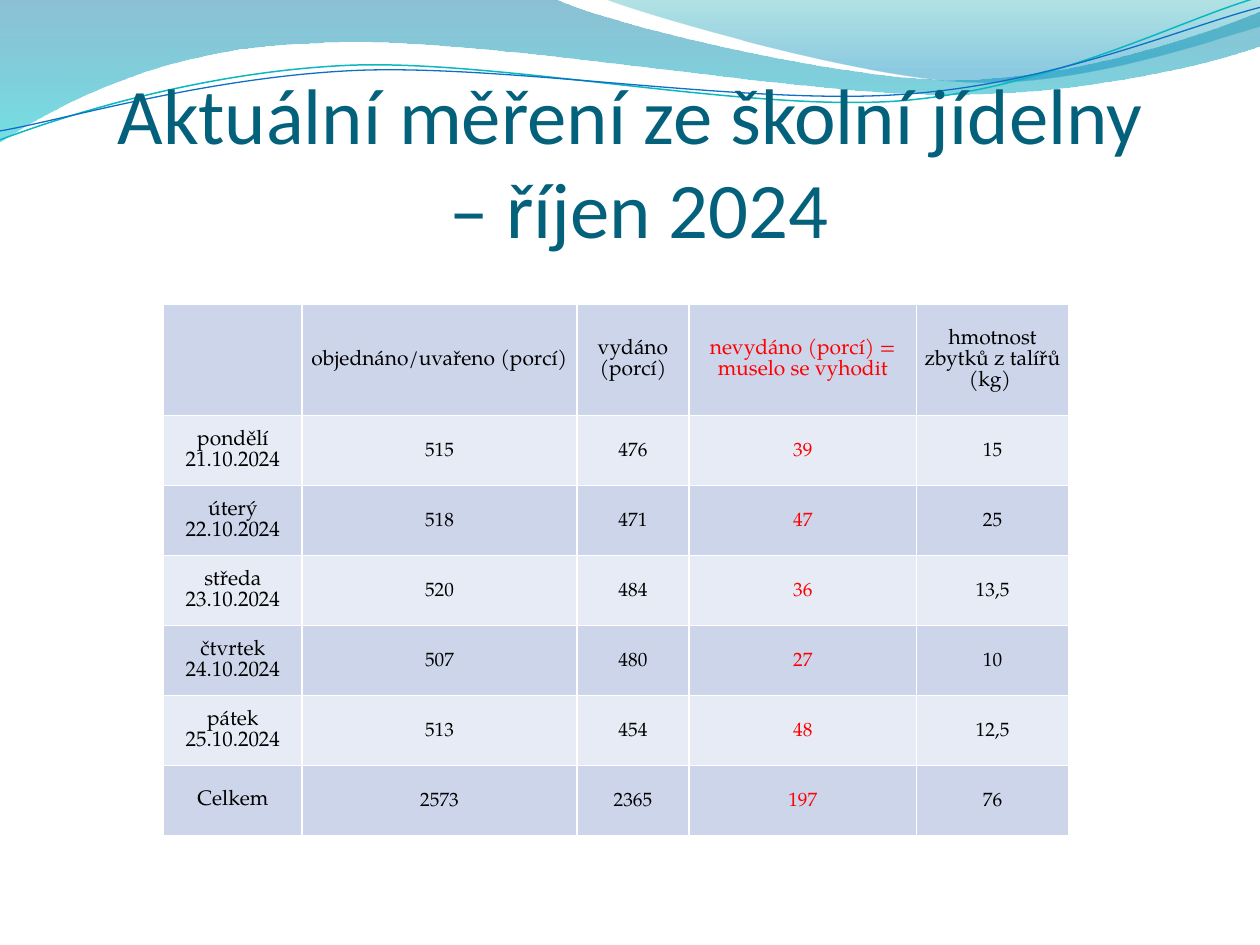
from dataclasses import dataclass

from lxml import etree
from pptx import Presentation
from pptx.dml.color import RGBColor
from pptx.enum.text import MSO_ANCHOR, MSO_AUTO_SIZE, PP_ALIGN
from pptx.oxml.ns import qn
from pptx.util import Cm, Pt

CENTER = PP_ALIGN.CENTER
MIDDLE, BOTTOM = MSO_ANCHOR.MIDDLE, MSO_ANCHOR.BOTTOM
NO_AUTOFIT = MSO_AUTO_SIZE.NONE
TITLE_ONLY = 5


@dataclass(frozen=True)
class Theme:
    title_font: str = "Calibri"
    table_font: str = "TeX Gyre Pagella"
    title_size: float = 45
    label_size: float = 12
    value_size: float = 11
    title_color: str = "04617B"
    text_color: str = "000000"
    alert_color: str = "FF0000"
    border_color: str = "FFFFFF"
    bands: tuple = ("CCD5EA", "E7EBF5")
    # Gradient stops: position, colour, opacity in percent
    wide_wave: tuple = ((0, "0074A1", 45), (1, "00C6CF", 55))
    right_wave: tuple = ((0, "00A1A9", 30), (0.8, "008BBF", 45))
    teal_line: str = "0AB8BF"
    blue_line: str = "0F6FC6"
    curve_rotation: float = 357.3


# Outlines in cm: a start point, then lines (x, y) or cubic curves (six numbers)
WIDE_WAVE = [
    (0, 0), (11.18, -0.03),
    (12.09, 0.43, 16.87, 1.6, 19.25, 1.6),
    (21.67, 1.6, 24.33, 0.66, 25.4, 0.23),
    (25.43, 0.91),
    (24.97, 1.12, 22.1, 1.93, 18.95, 1.9),
    (15.8, 1.9, 9.7, 0.71, 6.53, 0.86),
    (3.28, 0.91, 1.17, 2.11, -0.03, 2.87),
]
RIGHT_WAVE = [
    (12.17, -0.03),
    (12.93, 0.28, 17.32, 1.57, 19.53, 1.65),
    (21.74, 1.75, 24.41, 0.81, 25.4, 0.53),
    (25.4, 0),
]
# The two thin curves are given before their rotation
TEAL_CURVE = [
    (-0.05, 2.22),
    (1.19, 1.82, 4.02, 1.04, 7.05, 1.05),
    (10.05, 1.07, 15.02, 2.37, 18.08, 2.29),
    (21.13, 2.2, 23.86, 0.91, 25.41, 0.55),
]
BLUE_CURVE = [
    (-0.04, 2.04),
    (1.16, 1.9, 4.17, 1.15, 7.2, 1.16),
    (10.25, 1.18, 15.13, 2.25, 18.19, 2.16),
    (21.22, 2.1, 23.93, 1.06, 25.45, 0.75),
]

TITLE_LINES = ["Aktuální měření ze školní jídelny", " – říjen 2024"]
COLUMN_WIDTHS = [2.79, 5.54, 2.26, 4.59, 3.06]
HEADER_HEIGHT, DAY_HEIGHT = 2.25, 1.41
ALERT_COLUMN = 3
ROWS = [
    ["", "objednáno/uvařeno (porcí)", "vydáno (porcí)",
     "nevydáno (porcí) = muselo se vyhodit", "hmotnost zbytků z talířů (kg) "],
    ["pondělí 21.10.2024", "515", "476", "39", "15"],
    ["úterý 22.10.2024", "518", "471", "47", "25"],
    ["středa 23.10.2024", "520", "484", "36", "13,5"],
    ["čtvrtek 24.10.2024", "507", "480", "27", "10"],
    ["pátek 25.10.2024", "513", "454", "48", "12,5"],
    ["Celkem", "2573", "2365", "197", "76"],
]


class SlideBuilder:
    def __init__(self, slide, theme):
        self.slide = slide
        self.theme = theme

    def add_run(self, paragraph, text, font, size, color):
        run = paragraph.add_run()
        run.text = text
        run.font.name = font
        run.font.size = Pt(size)
        run.font.color.rgb = RGBColor.from_string(color)

    def outline(self, outline, close):
        start, *segments = outline
        points = [(Cm(segment[i]), Cm(segment[i + 1]))
                  for segment in segments for i in range(0, len(segment), 2)]
        builder = self.slide.shapes.build_freeform(Cm(start[0]), Cm(start[1]))
        builder.add_line_segments(points, close=close)
        shape = builder.convert_to_shape()
        shape.shadow.inherit = False
        # Join each group of three points into one cubic curve
        lines = iter(list(shape.element.iter(qn("a:lnTo"))))
        for segment in segments:
            first = next(lines)
            if len(segment) == 6:
                curve = etree.Element(qn("a:cubicBezTo"))
                first.addprevious(curve)
                for line in (first, next(lines), next(lines)):
                    curve.append(line[0])
                    line.getparent().remove(line)
        return shape

    def wave(self, outline, stops):
        shape = self.outline(outline, close=True)
        shape.line.fill.background()
        shape.fill.gradient()
        shape.fill.gradient_angle = 270
        for stop, (position, color, _) in zip(shape.fill.gradient_stops, stops):
            stop.position = position
            stop.color.rgb = RGBColor.from_string(color)
        colors = shape.element.spPr.iter(qn("a:srgbClr"))
        for color, (_, _, opacity) in zip(colors, stops):
            etree.SubElement(color, qn("a:alpha")).set("val", str(opacity * 1000))

    def curve(self, outline, color, width):
        shape = self.outline(outline, close=False)
        shape.rotation = self.theme.curve_rotation
        shape.fill.background()
        shape.line.color.rgb = RGBColor.from_string(color)
        shape.line.width = Pt(width)

    def title(self, lines, left, top, width, height):
        title = self.slide.shapes.title
        title.left, title.top = Cm(left), Cm(top)
        title.width, title.height = Cm(width), Cm(height)
        frame = title.text_frame
        frame.auto_size = NO_AUTOFIT
        frame.word_wrap = True
        frame.vertical_anchor = BOTTOM
        frame.margin_left = frame.margin_right = frame.margin_bottom = 0
        paragraph = frame.paragraphs[0]
        paragraph.alignment = CENTER
        for index, line in enumerate(lines):
            if index:
                paragraph.add_line_break()
            self.add_run(paragraph, line, self.theme.title_font,
                         self.theme.title_size, self.theme.title_color)
        # Bring the title in front of the waves
        self.slide.shapes.element.append(title.element)

    def cell(self, cell, text, fill, size, color):
        cell.margin_left = cell.margin_right = cell.margin_top = Cm(0.03)
        cell.margin_bottom = 0
        cell.vertical_anchor = MIDDLE
        cell.fill.solid()
        cell.fill.fore_color.rgb = RGBColor.from_string(fill)
        if text:
            paragraph = cell.text_frame.paragraphs[0]
            paragraph.alignment = CENTER
            paragraph.line_spacing = Pt(self.theme.label_size)
            self.add_run(paragraph, text, self.theme.table_font, size, color)
        properties = cell._tc.get_or_add_tcPr()
        for index, side in enumerate(("a:lnL", "a:lnR", "a:lnT", "a:lnB")):
            border = etree.Element(qn(side), w=str(Pt(1)))
            solid = etree.SubElement(border, qn("a:solidFill"))
            etree.SubElement(solid, qn("a:srgbClr"), val=self.theme.border_color)
            properties.insert(index, border)

    def table(self, rows, left, top, widths, heights):
        theme = self.theme
        table = self.slide.shapes.add_table(
            len(rows), len(widths), Cm(left), Cm(top),
            Cm(sum(widths)), Cm(sum(heights))).table
        table.first_row = table.horz_banding = False
        for column, width in zip(table.columns, widths):
            column.width = Cm(width)
        for row_index, texts in enumerate(rows):
            table.rows[row_index].height = Cm(heights[row_index])
            for column_index, text in enumerate(texts):
                is_label = row_index == 0 or column_index == 0
                self.cell(
                    table.cell(row_index, column_index), text,
                    theme.bands[row_index % 2],
                    theme.label_size if is_label else theme.value_size,
                    theme.alert_color if column_index == ALERT_COLUMN else theme.text_color)


def main():
    presentation = Presentation()
    presentation.slide_width, presentation.slide_height = Cm(25.4), Cm(19.05)
    theme = Theme()
    slide = presentation.slides.add_slide(presentation.slide_layouts[TITLE_ONLY])
    builder = SlideBuilder(slide, theme)

    # Decorative waves at the top
    builder.wave(WIDE_WAVE, theme.wide_wave)
    builder.wave(RIGHT_WAVE, theme.right_wave)
    builder.curve(TEAL_CURVE, theme.teal_line, 0.85)
    builder.curve(BLUE_CURVE, theme.blue_line, 0.75)

    # Title and canteen measurements
    builder.title(TITLE_LINES, 1.27, 1.96, 22.86, 3.17)
    heights = [HEADER_HEIGHT] + [DAY_HEIGHT] * (len(ROWS) - 1)
    builder.table(ROWS, 3.3, 6.13, COLUMN_WIDTHS, heights)

    presentation.save("out.pptx")


if __name__ == "__main__":
    main()
